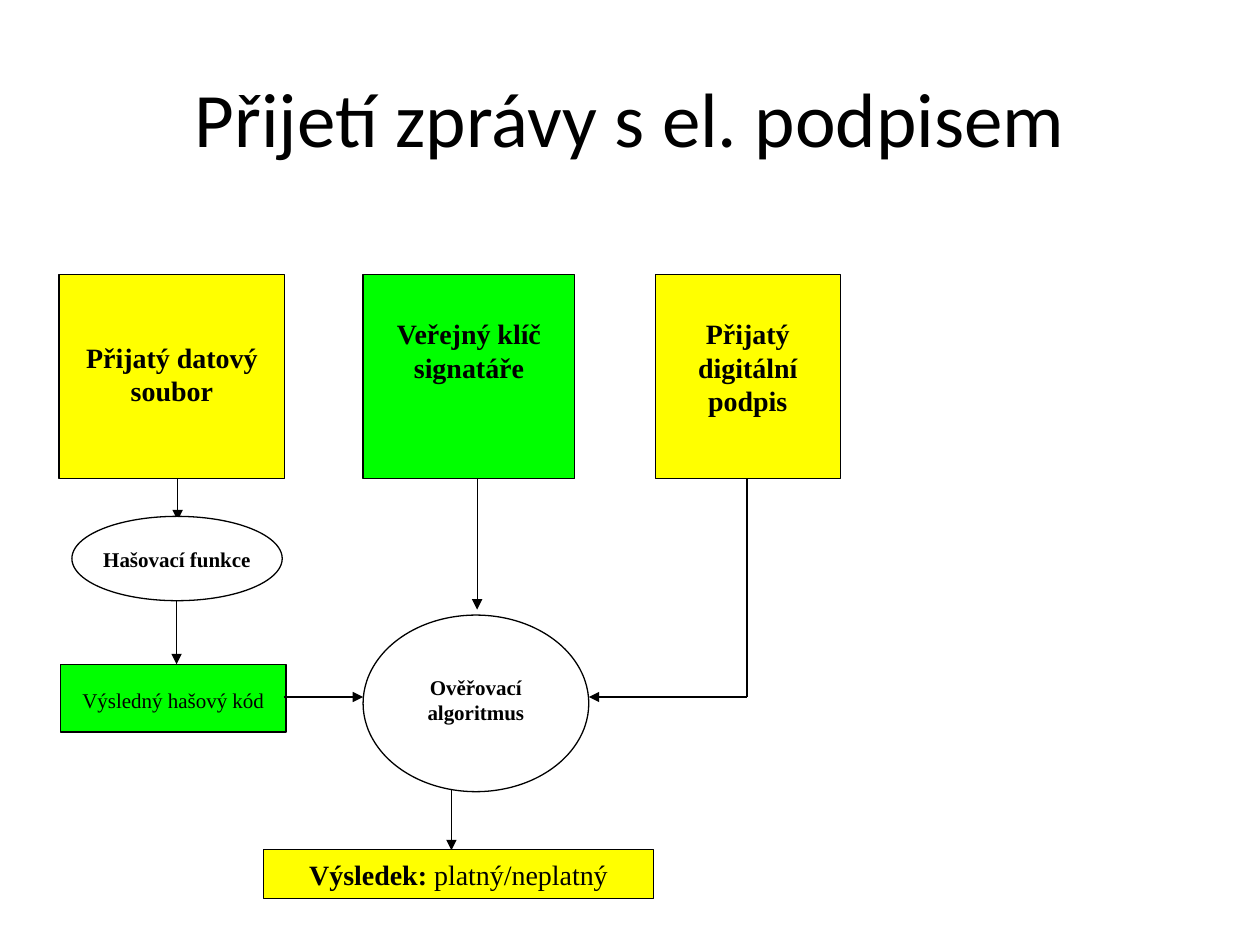
from dataclasses import dataclass

from lxml import etree
from pptx import Presentation
from pptx.dml.color import RGBColor
from pptx.enum.shapes import MSO_CONNECTOR, MSO_SHAPE
from pptx.enum.text import MSO_ANCHOR, PP_ALIGN
from pptx.oxml.ns import qn
from pptx.util import Cm, Pt

RECT = MSO_SHAPE.RECTANGLE
OVAL = MSO_SHAPE.OVAL
LINE = MSO_CONNECTOR.STRAIGHT
TOP = MSO_ANCHOR.TOP
MIDDLE = MSO_ANCHOR.MIDDLE
CENTER = PP_ALIGN.CENTER


@dataclass(frozen=True)
class Theme:
    ink: RGBColor = RGBColor(0, 0, 0)
    paper: RGBColor = RGBColor(255, 255, 255)
    yellow: RGBColor = RGBColor(255, 255, 0)
    green: RGBColor = RGBColor(0, 255, 0)
    head: str = "Calibri"
    body: str = "Times New Roman"
    title: int = 44
    large: int = 16
    small: int = 12
    rule: float = 0.75


def write(frame, text, *, font, size, color, bold=False, tail="",
          anchor=TOP, inset=0.13, wrap=True):
    frame.word_wrap = wrap
    frame.vertical_anchor = anchor
    frame.margin_top = Cm(inset)
    para = frame.paragraphs[0]
    para.alignment = CENTER
    for part, strong in ((text, bold), (tail, False)):
        if part:
            run = para.add_run()
            run.text = part
            run.font.name = font
            run.font.size = Pt(size)
            run.font.bold = strong
            run.font.color.rgb = color


class Chart:
    def __init__(self, slide, theme):
        self.slide = slide
        self.theme = theme

    def title(self, text):
        look = self.theme
        shape = self.slide.shapes.title
        shape.left, shape.top = Cm(1.27), Cm(0.76)
        shape.width, shape.height = Cm(22.86), Cm(3.18)
        write(shape.text_frame, text, font=look.head, size=look.title,
              color=look.ink, anchor=MIDDLE)

    def node(self, kind, place, fill, text, size, bold=True, **style):
        look = self.theme
        shape = self.slide.shapes.add_shape(kind, *map(Cm, place))
        shape.shadow.inherit = False
        shape.fill.solid()
        shape.fill.fore_color.rgb = fill
        shape.line.color.rgb = look.ink
        shape.line.width = Pt(look.rule)
        write(shape.text_frame, text, font=look.body, size=size,
              color=look.ink, bold=bold, **style)

    def link(self, start, end, arrow=True):
        line = self.slide.shapes.add_connector(LINE, *map(Cm, start + end))
        line.line.color.rgb = self.theme.ink
        line.line.width = Pt(self.theme.rule)
        if arrow:
            stroke = line.line._get_or_add_ln()
            etree.SubElement(stroke, qn("a:tailEnd"), type="triangle")
        etree.SubElement(line._element.spPr, qn("a:effectLst"))


def main():
    deck = Presentation()
    deck.slide_width, deck.slide_height = Cm(25.4), Cm(19.05)
    look = Theme()
    chart = Chart(deck.slides.add_slide(deck.slide_layouts[5]), look)
    chart.title("Přijetí zprávy s el. podpisem")

    chart.link((9.1, 15.52), (9.1, 17.14))
    chart.node(RECT, (5.31, 17.12, 7.87, 1), look.yellow, "Výsledek:",
               look.large, tail=" platný/neplatný", inset=0.17)

    inputs = (
        (1.19, 4.55, look.yellow, "Přijatý datový soubor", 1.32),
        (7.32, 4.27, look.green, "Veřejný klíč signatáře", 0.84),
        (13.21, 3.73, look.yellow, "Přijatý digitální podpis", 0.84),
    )
    for left, width, fill, text, inset in inputs:
        chart.node(RECT, (left, 5.54, width, 4.11), fill, text,
                   look.large, inset=inset)

    chart.node(RECT, (1.22, 13.39, 4.55, 1.37), look.green,
               "Výsledný hašový kód", look.small, bold=False, inset=0.48)
    chart.link((3.56, 11.89), (3.56, 13.39))

    chart.link((15.06, 9.65), (15.06, 14.05), arrow=False)
    chart.link((15.06, 14.05), (11.87, 14.05))
    chart.node(OVAL, (7.32, 12.4, 4.55, 3.56), look.paper,
               "Ověřovací algoritmus", look.small, inset=0.67)
    chart.link((5.72, 14.05), (7.32, 14.05))
    chart.link((9.62, 9.65), (9.62, 12.29))

    chart.link((3.58, 9.65), (3.58, 10.49))
    chart.node(OVAL, (1.45, 10.41, 4.24, 1.7), look.paper,
               "Hašovací funkce", look.small, anchor=MIDDLE, wrap=False)

    deck.save("out.pptx")


if __name__ == "__main__":
    main()
